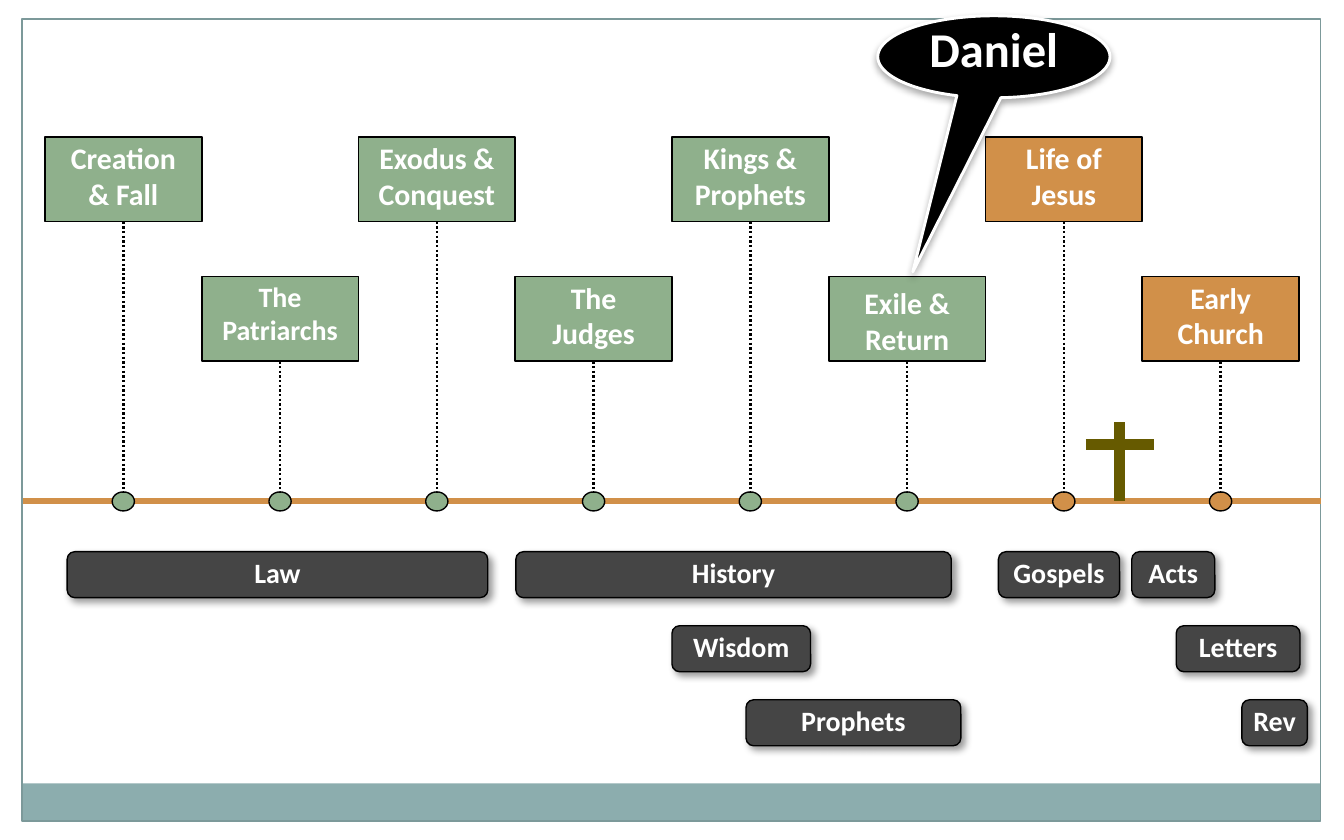
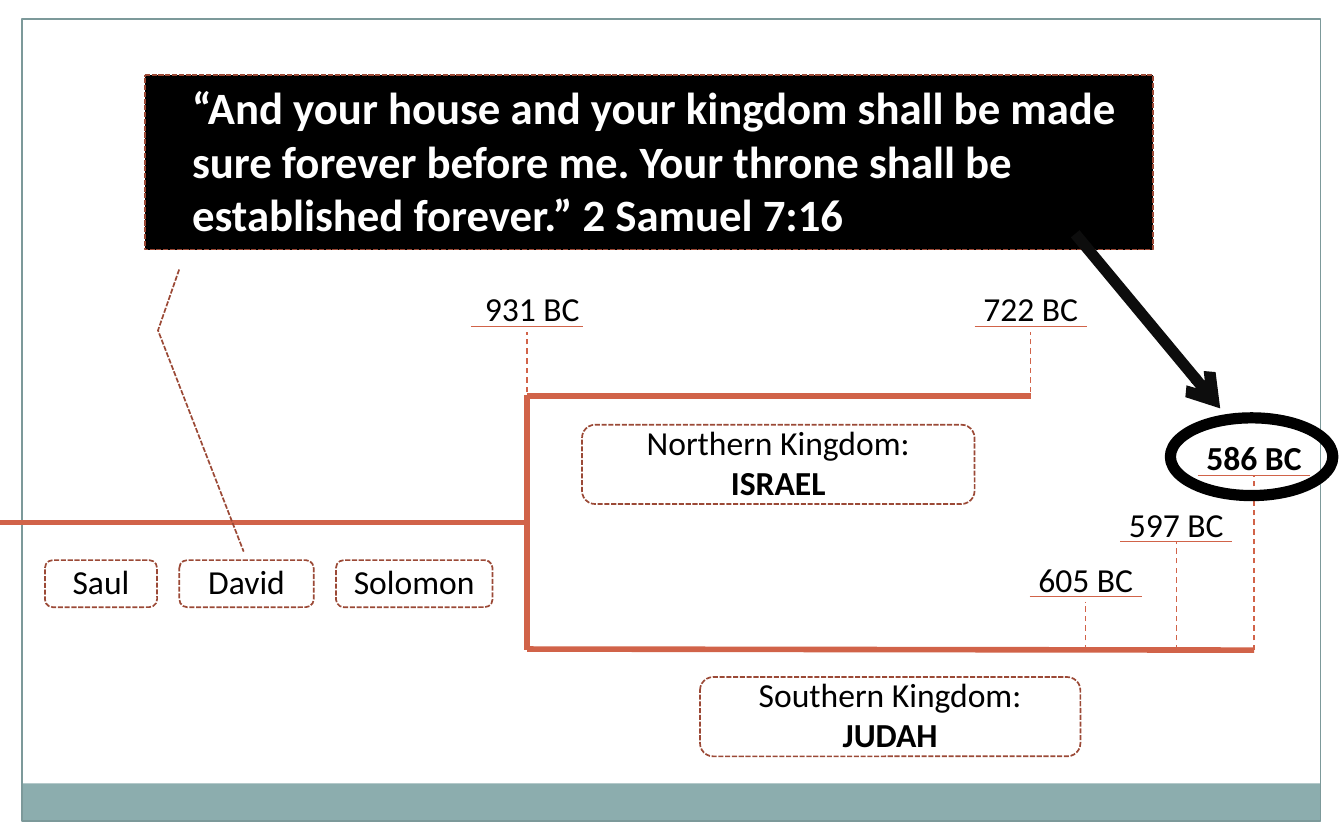
from dataclasses import dataclass

from lxml import etree
from pptx import Presentation
from pptx.dml.color import RGBColor
from pptx.enum.dml import MSO_LINE
from pptx.enum.shapes import MSO_CONNECTOR, MSO_SHAPE
from pptx.enum.text import MSO_ANCHOR, PP_ALIGN
from pptx.oxml.ns import qn
from pptx.util import Cm, Pt

RECTANGLE = MSO_SHAPE.RECTANGLE
ROUNDED = MSO_SHAPE.ROUNDED_RECTANGLE
OVAL = MSO_SHAPE.OVAL
OVAL_CALLOUT = MSO_SHAPE.OVAL_CALLOUT
LINE_CALLOUT = MSO_SHAPE.LINE_CALLOUT_2
STRAIGHT = MSO_CONNECTOR.STRAIGHT
DOTTED = MSO_LINE.ROUND_DOT
SHORT_DASH = MSO_LINE.SQUARE_DOT
DASH = MSO_LINE.DASH
LEFT, CENTER = PP_ALIGN.LEFT, PP_ALIGN.CENTER
TOP, MIDDLE = MSO_ANCHOR.TOP, MSO_ANCHOR.MIDDLE
SIDE_TOP, SIDE_BOTTOM = 0, 2

SLIDE_WIDTH, SLIDE_HEIGHT = 25.4, 15.88


@dataclass(frozen=True)
class Theme:
    font: str = "Calibri"
    white: str = "FFFFFF"
    black: str = "000000"
    arrow: str = "0D0D0D"
    band: str = "8CADAE"
    frame: str = "7C999A"
    old_testament: str = "8FB08C"
    new_testament: str = "D19049"
    book: str = "454545"
    cross: str = "665A00"
    reign: str = "D16349"
    outline: str = "9B4936"
    callout_size: int = 26
    quote_size: int = 24
    date_size: int = 18
    era_size: int = 16
    book_size: int = 15


THEME = Theme()


def write_text(shape, text, *, size, color, bold=False, align=CENTER, anchor=MIDDLE,
               insets=(0, 0, 0, 0), line_spacing=None):
    frame = shape.text_frame
    frame.word_wrap = True
    frame.vertical_anchor = anchor
    (frame.margin_left, frame.margin_top,
     frame.margin_right, frame.margin_bottom) = [Cm(inset) for inset in insets]
    frame.text = text
    for paragraph in frame.paragraphs:
        paragraph.alignment = align
        paragraph.line_spacing = line_spacing
        for run in paragraph.runs:
            run.font.name = THEME.font
            run.font.size = Pt(size)
            run.font.bold = bold
            run.font.color.rgb = RGBColor.from_string(color)


class Deck:
    def __init__(self, theme):
        self.theme = theme
        self.presentation = Presentation()
        self.presentation.slide_width = Cm(SLIDE_WIDTH)
        self.presentation.slide_height = Cm(SLIDE_HEIGHT)
        self.slide = None

    def add_slide(self):
        self.slide = self.presentation.slides.add_slide(self.presentation.slide_layouts[6])
        self.shape(RECTANGLE, 0.41, 14.81, 24.54, 0.71, fill=self.theme.band)
        self.shape(RECTANGLE, 0.42, 0.36, 24.54, 15.16, line=self.theme.frame)

    def shape(self, kind, left, top, width, height, fill=None, line=None, weight=0.75,
              dash=None, adjustments=()):
        shape = self.slide.shapes.add_shape(kind, Cm(left), Cm(top), Cm(width), Cm(height))
        shape.shadow.inherit = False
        if fill:
            shape.fill.solid()
            shape.fill.fore_color.rgb = RGBColor.from_string(fill)
        else:
            shape.fill.background()
        if line:
            self.stroke(shape, line, weight, dash)
        else:
            shape.line.fill.background()
        for index, value in enumerate(adjustments):
            shape.adjustments[index] = value
        return shape

    def stroke(self, shape, color, weight, dash):
        shape.line.color.rgb = RGBColor.from_string(color)
        shape.line.width = Pt(weight)
        if dash:
            shape.line.dash_style = dash

    def shadow(self, shape, opacity, blur, distance, angle):
        effects = shape.element.spPr.find(qn("a:effectLst"))
        outer = etree.SubElement(effects, qn("a:outerShdw"), blurRad=str(Pt(blur)),
                                 dist=str(Pt(distance)), dir=str(angle * 60000),
                                 algn="ctr", rotWithShape="0")
        color = etree.SubElement(outer, qn("a:srgbClr"), val=self.theme.black)
        etree.SubElement(color, qn("a:alpha"), val=str(opacity * 1000))

    def line(self, x1, y1, x2, y2, color, weight, dash=None, arrow=False):
        connector = self.slide.shapes.add_connector(STRAIGHT, Cm(x1), Cm(y1), Cm(x2), Cm(y2))
        self.stroke(connector, color, weight, dash)
        properties = connector.element.spPr
        if arrow:
            etree.SubElement(properties.find(qn("a:ln")), qn("a:tailEnd"), type="arrow")
        etree.SubElement(properties, qn("a:effectLst"))
        return connector

    def era(self, text, left, top, width, color, size, text_top):
        theme = self.theme
        center, height, dot_top, dot_width = left + width / 2, 1.6, 9.3, 0.42
        box = self.shape(RECTANGLE, left, top, width, height, color, theme.black, 0.9)
        write_text(box, text, size=size, color=theme.white, bold=True, anchor=TOP,
                   insets=(0.25, text_top, 0.25, 0))
        dot = self.shape(OVAL, center - dot_width / 2, dot_top, dot_width, 0.36,
                         color, theme.black)
        stem = self.line(center, top + height, center, dot_top, theme.black, 1.25, DOTTED)
        stem.begin_connect(box, SIDE_BOTTOM)
        stem.end_connect(dot, SIDE_TOP)

    def book(self, text, left, top, width):
        theme = self.theme
        box = self.shape(ROUNDED, left, top, width, 0.87, theme.book, theme.black)
        self.shadow(box, 40, 4, 3, 45)
        write_text(box, text, size=theme.book_size, color=theme.white, bold=True,
                   insets=(0, 0, 0, 0.08))

    def label(self, text, left, top, width, height):
        box = self.shape(ROUNDED, left, top, width, height, line=self.theme.outline,
                         weight=0.9, dash=SHORT_DASH)
        write_text(box, text, size=self.theme.date_size, color=self.theme.black,
                   insets=(0, 0, 0, 0.1))
        return box

    def reign(self, x1, y1, x2, y2):
        self.line(x1, y1, x2, y2, self.theme.reign, 3)

    def date(self, text, center, underline, base, gap=0, shift=0, bold=False):
        theme = self.theme
        width, half_rule = 2.54, 1.06
        box = self.slide.shapes.add_textbox(Cm(center + shift - width / 2),
                                            Cm(underline - 0.85), Cm(width), Cm(1.02))
        write_text(box, text, size=theme.date_size, color=theme.black, bold=bold)
        self.line(center, base, center, underline + gap, theme.reign, 0.75, DASH)
        self.line(center - half_rule, underline, center + half_rule, underline,
                  theme.reign, 0.75)


def build_bible_timeline(deck):
    theme = deck.theme
    deck.add_slide()
    deck.line(0.43, 9.47, 24.97, 9.47, theme.new_testament, 3)

    margin = 0.85
    eras = ["Creation & Fall", "The Patriarchs", "Exodus & Conquest", "The\nJudges",
            "Kings & Prophets", "Exile & Return", "Life of Jesus", "Early Church"]
    sizes = {"The Patriarchs": theme.book_size}
    text_tops = {"Exile & Return": 0.15}
    column = (SLIDE_WIDTH - 2 * margin) / len(eras)
    for index, era in enumerate(eras):
        color = theme.old_testament if index < 6 else theme.new_testament
        deck.era(era, margin + index * column, 5.23 if index % 2 else 2.59, column, color,
                 sizes.get(era, theme.era_size), text_tops.get(era, 0.05))

    deck.line(21.16, 7.98, 21.16, 9.47, theme.cross, 6)
    deck.line(20.52, 8.41, 21.8, 8.41, theme.cross, 6)

    callout = deck.shape(OVAL_CALLOUT, 16.59, 0.3, 4.39, 1.55, theme.black, theme.white,
                         1.57, adjustments=(-0.349, 2.623))
    deck.shadow(callout, 35, 4, 2, 90)
    write_text(callout, "Daniel", size=theme.callout_size, color=theme.white, bold=True,
               line_spacing=Pt(22))

    book_rows = [
        [("Law", 1.27, 7.95), ("History", 9.75, 8.23), ("Gospels", 18.87, 2.29),
         ("Acts", 21.39, 1.57)],
        [("Wisdom", 12.7, 2.62), ("Letters", 22.23, 2.34)],
        [("Prophets", 14.1, 4.06), ("Rev", 23.47, 1.24)],
    ]
    for row, books in enumerate(book_rows):
        for text, left, width in books:
            deck.book(text, left, 10.43 + row * 1.4, width)


def build_divided_kingdom(deck):
    theme = deck.theme
    split, north, south = 9.96, 7.49, 12.29
    deck.add_slide()
    deck.reign(0, 9.88, split, 9.88)
    for king, left, width in [("Saul", 0.85, 2.12), ("David", 3.39, 2.54),
                              ("Solomon", 6.35, 2.96)]:
        deck.label(king, left, 10.59, width, 0.89)

    deck.reign(split, 12.27, 23.7, south)
    deck.reign(split, north, 19.48, north)
    deck.reign(split, north - 0.02, split, south)
    for text, left, top, width in [("Southern Kingdom:\nJUDAH", 13.23, 12.8, 7.19),
                                   ("Northern Kingdom:\nISRAEL", 11, 8.03, 7.42)]:
        box = deck.label(text, left, top, width, 1.5)
        box.text_frame.paragraphs[1].runs[0].font.bold = True

    deck.date("931 BC", split, 6.17, 7.42, gap=0.1, shift=0.1)
    deck.date("722 BC", 19.48, 6.17, 7.42, gap=0.1)
    deck.date("586 BC", 23.7, 8.99, south, bold=True)
    deck.date("605 BC", 20.52, 11.28, south, gap=0.1)
    deck.date("597 BC", 22.23, 10.24, south)

    quote = deck.shape(LINE_CALLOUT, 2.74, 1.42, 19.05, 3.3, theme.black, theme.outline,
                       0.9, SHORT_DASH, (1.114, 0.034, 1.463, 0.013, 2.73, 0.098))
    write_text(quote, "“And your house and your kingdom shall be made sure forever before me. "
               "Your throne shall be established forever.” 2 Samuel 7:16",
               size=theme.quote_size, color=theme.white, bold=True, align=LEFT,
               insets=(0.89, 0, 0.69, 0.08))

    deck.line(20.32, 4.42, 23.06, 7.72, theme.arrow, 6, arrow=True)
    deck.shape(OVAL, 22.12, 7.9, 3.07, 1.47, line=theme.black, weight=6)


def main():
    deck = Deck(THEME)
    build_bible_timeline(deck)
    build_divided_kingdom(deck)
    deck.presentation.save("out.pptx")


if __name__ == "__main__":
    main()
